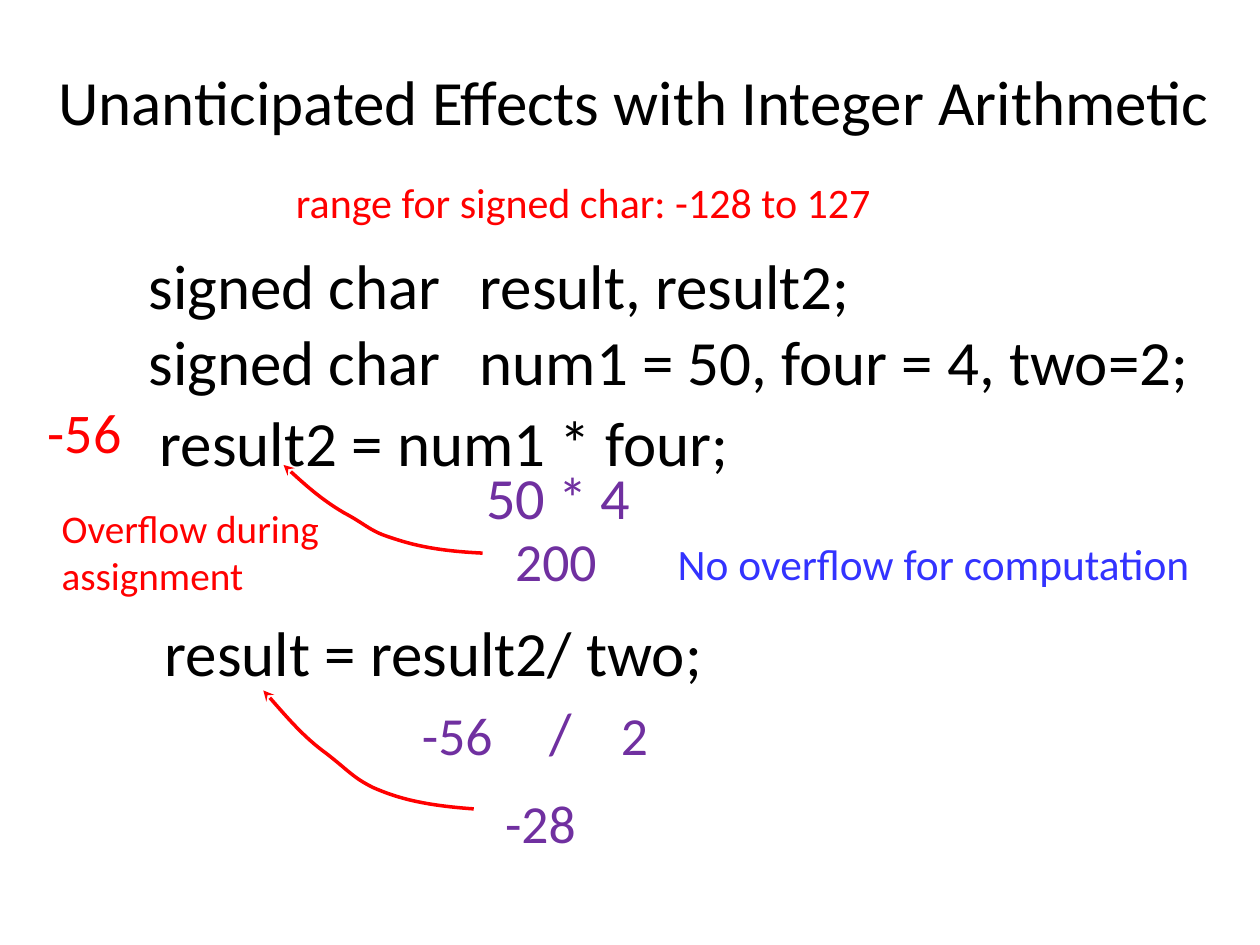
import pptx
import pptx.dml.color
import pptx.enum.text
import pptx.oxml.ns
import pptx.oxml.xmlchemy
import pptx.util

COLORS = {
    "code": "000000",
    "alert": "FF0000",
    "value": "7030A0",
    "note": "3333FF",
}
qn = pptx.oxml.ns.qn
new_element = pptx.oxml.xmlchemy.OxmlElement


class SlideBuilder:
    font = "Calibri"
    columns = 100
    rows = 75

    def __init__(self, presentation):
        self.column = presentation.slide_width / self.columns
        self.row = presentation.slide_height / self.rows
        self.slide = presentation.slides.add_slide(presentation.slide_layouts[6])

    def place(self, column, row):
        return round(column * self.column), round(row * self.row)

    def color(self, name):
        return pptx.dml.color.RGBColor.from_string(COLORS[name])

    def text(self, box, content, size, color):
        left, top, width, height = box
        shape = self.slide.shapes.add_textbox(
            *self.place(left, top), *self.place(width, height)
        )
        shape.text_frame.word_wrap = True
        paragraph = shape.text_frame.paragraphs[0]
        run = paragraph.add_run()
        run.text = content
        run.font.name = self.font
        run.font.size = pptx.util.Pt(size)
        run.font.color.rgb = self.color(color)
        return shape, paragraph

    def title(self, box, content, size):
        shape, paragraph = self.text(box, content, size, "code")
        shape.text_frame.vertical_anchor = pptx.enum.text.MSO_ANCHOR.MIDDLE
        paragraph.alignment = pptx.enum.text.PP_ALIGN.CENTER

    def line_of_text(self, box, content, size, color, tab=None):
        paragraph = self.text(box, content, size, color)[1]
        properties = paragraph._p.get_or_add_pPr()
        spacing = new_element("a:spcBef")
        percent = new_element("a:spcPct")
        percent.set("val", "20000")
        spacing.append(percent)
        properties.append(spacing)
        if tab:
            tabs = new_element("a:tabLst")
            stop = new_element("a:tab")
            stop.set("pos", str(round(tab * self.column)))
            stop.set("algn", "l")
            tabs.append(stop)
            properties.append(tabs)

    def curved_arrow(self, points, color, width):
        start, *rest = [self.place(*point) for point in points]
        builder = self.slide.shapes.build_freeform(*start)
        builder.add_line_segments(rest, close=False)
        shape = builder.convert_to_shape()
        shape.shadow.inherit = False
        shape.fill.background()
        shape.line.color.rgb = self.color(color)
        shape.line.width = pptx.util.Pt(width)
        self.bend(shape)
        tail = new_element("a:tailEnd")
        tail.set("type", "stealth")
        shape._element.spPr.find(qn("a:ln")).append(tail)

    def bend(self, shape):
        path = next(shape._element.iter(qn("a:path")))
        segments = path.findall(qn("a:lnTo"))
        for index in range(0, len(segments), 3):
            curve = new_element("a:cubicBezTo")
            for segment in segments[index:index + 3]:
                curve.append(segment[0])
                path.remove(segment)
            path.append(curve)


def main():
    presentation = pptx.Presentation()
    presentation.slide_width = pptx.util.Inches(10)
    presentation.slide_height = pptx.util.Inches(7.5)
    builder = SlideBuilder(presentation)

    builder.title(
        (2.5, 3, 95.6, 9.9), "Unanticipated Effects with Integer Arithmetic", 36
    )

    declarations = [
        (19.1, "signed char\tresult, result2;"),
        (25.1, "signed char\tnum1 = 50, four = 4, two=2;"),
    ]
    for top, content in declarations:
        builder.line_of_text((10.8, top, 86.4, 6.9), content, 36, "code", tab=26.3)

    lines = [
        ((22.5, 13.5, 68.2, 5.9), "range for signed char: -128 to 127", 24, "alert"),
        ((11.7, 31.5, 62.8, 6.9), "result2 = num1 * four;", 36, "code"),
        ((2.8, 31.1, 9.7, 7.7), "-56", 32, "alert"),
        ((37.6, 36.1, 13.6, 6.9), "50 * 4", 33.3, "value"),
        ((39.9, 41.4, 8.9, 5.6), "200", 30.6, "value"),
        ((3.9, 39.5, 22.8, 7.7), "Overflow during assignment", 22.4, "alert"),
        ((52.8, 42.1, 45.4, 4.8), "No overflow for computation", 24.8, "note"),
        ((12.1, 48.2, 62.8, 6.9), "result = result2/ two;", 36, "code"),
        ((32.5, 55.2, 10.1, 5.6), "-56", 30.6, "value"),
        ((42.6, 54.8, 5.9, 5.9), "/", 33.3, "value"),
        ((48.3, 55.2, 8.3, 5.6), "2", 30.6, "value"),
        ((39.1, 62.2, 10.1, 5.6), "-28", 30.6, "value"),
    ]
    for line in lines:
        builder.line_of_text(*line)

    assignment_arrows = [
        [(38.3, 43.9), (34.1, 43.7), (32.3, 43.1), (30.8, 42.6), (29.3, 42.1),
         (29, 41.6), (27.3, 40.7), (25.6, 39.7), (24, 38.3), (22.5, 36.9)],
        [(37.6, 64.2), (33.2, 63.9), (31.2, 63.2), (29.6, 62.5), (28, 61.7),
         (27.7, 61.2), (25.9, 59.8), (24.1, 58.5), (22.5, 56.6), (20.9, 54.8)],
    ]
    for points in assignment_arrows:
        builder.curved_arrow(points, "alert", 2)

    presentation.save("out.pptx")


if __name__ == "__main__":
    main()
